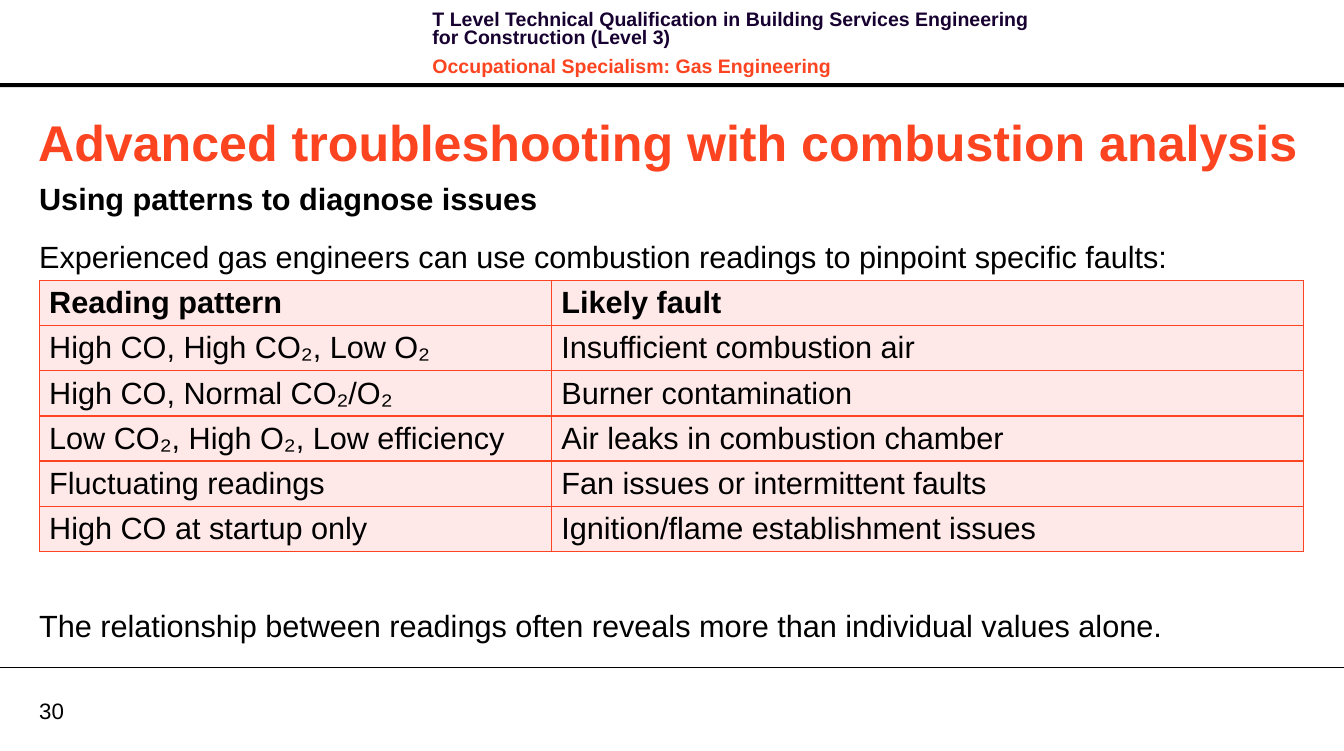
import pptx
import pptx.dml.color
import pptx.enum.shapes
import pptx.enum.text
import pptx.oxml
import pptx.oxml.ns
import pptx.util
from dataclasses import dataclass

Pt = pptx.util.Pt
MIDDLE = pptx.enum.text.MSO_ANCHOR.MIDDLE


@dataclass
class Theme:
    font: str = "Arial"
    black: str = "000000"
    navy: str = "170130"
    orange: str = "FC4421"
    pale: str = "FEE9E8"
    title: int = 36
    body: int = 22
    number: int = 16
    header: int = 14


theme = Theme()


def format_runs(paragraph, size, color=theme.black, bold=False):
    for run in paragraph.runs:
        run.font.name = theme.font
        run.font.size = Pt(size)
        run.font.bold = bold
        run.font.color.rgb = pptx.dml.color.RGBColor.from_string(color)


def add_text(left, top, width, height, lines, inset=(0, 0), anchor=None):
    """Add a text box; each line is (text, size, color, bold)."""
    text_frame = slide.shapes.add_textbox(Pt(left), Pt(top), Pt(width), Pt(height)).text_frame
    text_frame.word_wrap = True
    text_frame.margin_left = text_frame.margin_right = Pt(inset[0])
    text_frame.margin_top = text_frame.margin_bottom = Pt(inset[1])
    text_frame.vertical_anchor = anchor
    text_frame.text = "\n".join(line[0] for line in lines)
    for paragraph, line in zip(text_frame.paragraphs, lines):
        format_runs(paragraph, *line[1:])
    return text_frame.paragraphs


presentation = pptx.Presentation()
presentation.slide_width = Pt(964)
presentation.slide_height = Pt(538.6)
slide = presentation.slides.add_slide(presentation.slide_layouts[6])
black = pptx.dml.color.RGBColor.from_string(theme.black)

# Header bar
bar = slide.shapes.add_shape(
    pptx.enum.shapes.MSO_SHAPE.RECTANGLE, 0, Pt(59.6), presentation.slide_width, Pt(2.9))
bar.shadow.inherit = False
bar.fill.solid()
bar.fill.fore_color.rgb = black
bar.line.fill.background()

# Footer rule and slide number
rule = slide.shapes.add_connector(
    pptx.enum.shapes.MSO_CONNECTOR.STRAIGHT, 0, Pt(478.8), presentation.slide_width, Pt(478.8))
rule.line.color.rgb = black
rule.line.width = Pt(0.75)
rule._element.spPr.append(pptx.oxml.parse_xml(
    f"<a:effectLst {pptx.oxml.ns.nsdecls('a')}/>"))
add_text(28.1, 499.7, 46, 19.4, [("30", theme.number)], anchor=MIDDLE)

# Course header
header = add_text(303.1, 5, 458.6, 46, [
    ("T Level Technical Qualification in Building Services Engineering "
     "for Construction (Level 3)", theme.header, theme.navy, True),
    ("Occupational Specialism: Gas Engineering", theme.header, theme.orange, True),
], inset=(7.2, 3.6))
for paragraph in header:
    paragraph.line_spacing = Pt(13.1)
    paragraph.space_after = Pt(4)
header[1].space_before = Pt(4)

# Title
add_text(20.2, 75.6, 943.8, 51.1, [
    ("Advanced troubleshooting with combustion analysis", theme.title, theme.orange, True),
], inset=(7.2, 3.6), anchor=MIDDLE)

# Body text, with room for the table before the closing line
body = add_text(28.1, 126.7, 898.6, 336.2, [
    ("Using patterns to diagnose issues", theme.body, theme.black, True),
    ("Experienced gas engineers can use combustion readings to pinpoint specific faults:",
     theme.body),
    ("The relationship between readings often reveals more than individual values alone.",
     theme.body),
])
for paragraph, space_after in zip(body, (12, 30, 12)):
    paragraph.line_spacing = 1.1
    paragraph.space_after = Pt(space_after)
body[2].space_before = Pt(206)

# Fault table
faults = [
    ("Reading pattern", "Likely fault"),
    ("High CO, High CO₂, Low O₂", "Insufficient combustion air"),
    ("High CO, Normal CO₂/O₂", "Burner contamination"),
    ("Low CO₂, High O₂, Low efficiency", "Air leaks in combustion chamber"),
    ("Fluctuating readings", "Fan issues or intermittent faults"),
    ("High CO at startup only", "Ignition/flame establishment issues"),
]
column_widths = (367.4, 539.6)
row_height = 31.9
table = slide.shapes.add_table(
    len(faults), len(column_widths), Pt(28.1), Pt(201.2),
    Pt(sum(column_widths)), Pt(row_height * len(faults))).table
for column, width in zip(table.columns, column_widths):
    column.width = Pt(width)
for row_index, texts in enumerate(faults):
    table.rows[row_index].height = Pt(row_height)
    for column_index, text in enumerate(texts):
        cell = table.cell(row_index, column_index)
        cell.text = text
        cell.vertical_anchor = MIDDLE
        cell.margin_top = cell.margin_bottom = Pt(3)
        format_runs(cell.text_frame.paragraphs[0], theme.body, bold=row_index == 0)
        cell.fill.solid()
        cell.fill.fore_color.rgb = pptx.dml.color.RGBColor.from_string(theme.pale)
        # Borders come before the fill in the cell properties
        for position, side in enumerate(("lnL", "lnR", "lnT", "lnB")):
            border = pptx.oxml.parse_xml(
                f'<a:{side} {pptx.oxml.ns.nsdecls("a")} w="{Pt(1)}"><a:solidFill>'
                f'<a:srgbClr val="{theme.orange}"/></a:solidFill></a:{side}>')
            cell._tc.get_or_add_tcPr().insert(position, border)

presentation.save("out.pptx")
